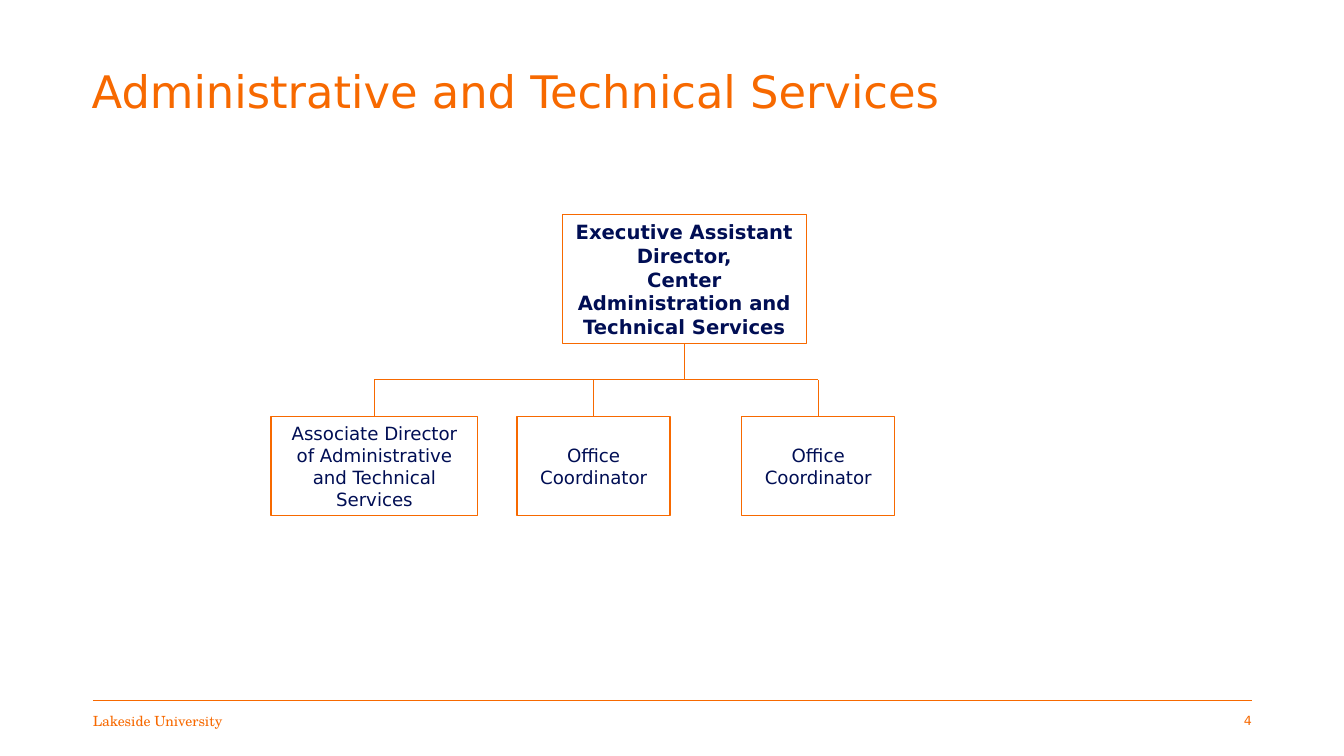
from pptx import Presentation
from pptx import util as u
from pptx.dml.color import RGBColor
from pptx.enum import shapes, text
from pptx.oxml.ns import qn
from lxml import etree

ORANGE, NAVY = "F76900", "000E54"
SANS, SERIF = "DejaVu Sans", "TeX Gyre Schola"

TITLE = "Administrative and Technical Services"
DIRECTOR = ["Executive Assistant Director,",
            "Center Administration and Technical Services"]
# left and width in cm, role
REPORTS = [
    (6.83, 5.21, "Associate Director of Administrative and Technical Services"),
    (13.03, 3.86, "Office Coordinator"),
    (18.69, 3.86, "Office Coordinator"),
]
# text, font, size, alignment
FOOTER = [
    ("Lakeside University", SERIF, 10, text.PP_ALIGN.LEFT),
    ("4", SANS, 9, text.PP_ALIGN.RIGHT),
]

DIRECTOR_BOX = (14.17, 5.41, 6.15, 3.25)
REPORT_TOP, REPORT_HEIGHT = 10.5, 2.49
BUS_Y = 9.57
MARGIN_LEFT, MARGIN_RIGHT = 2.34, 31.55
FOOTER_Y, FOOTER_WIDTH, FOOTER_HEIGHT = 17.65, 5.33, 1.02


def rgb(value):
    return RGBColor.from_string(value)


def write(frame, lines, size, color, align, font=SANS, bold=False):
    frame.word_wrap = True
    frame.vertical_anchor = text.MSO_ANCHOR.MIDDLE
    for index, line in enumerate(lines):
        paragraph = frame.paragraphs[0] if index == 0 else frame.add_paragraph()
        paragraph.alignment = align
        run = paragraph.add_run()
        run.text = line
        run.font.name = font
        run.font.size = u.Pt(size)
        run.font.bold = bold
        run.font.color.rgb = rgb(color)


def add_line(slide, x1, y1, x2, y2, width=1):
    line = slide.shapes.add_connector(
        shapes.MSO_CONNECTOR.STRAIGHT, *map(u.Cm, (x1, y1, x2, y2)))
    line.line.color.rgb = rgb(ORANGE)
    line.line.width = u.Pt(width)
    etree.SubElement(line._element.spPr, qn("a:effectLst"))
    return line


def add_role(slide, box, lines, size, bold=False):
    role = slide.shapes.add_shape(shapes.MSO_SHAPE.RECTANGLE, *map(u.Cm, box))
    role.shadow.inherit = False
    role.fill.background()
    role.line.color.rgb = rgb(ORANGE)
    role.line.width = u.Pt(1)
    write(role.text_frame, lines, size, NAVY, text.PP_ALIGN.CENTER, bold=bold)
    return role


def main():
    prs = Presentation()
    prs.slide_width, prs.slide_height = u.Cm(33.87), u.Cm(19.05)
    slide = prs.slides.add_slide(prs.slide_layouts[5])

    title = slide.shapes.title
    title.left, title.top = u.Cm(2.31), u.Cm(0.53)
    title.width, title.height = u.Cm(29.21), u.Cm(3.68)
    title.text_frame.margin_left = title.text_frame.margin_right = 0
    write(title.text_frame, [TITLE], 32, ORANGE, text.PP_ALIGN.LEFT)
    title.text_frame.paragraphs[0].line_spacing = 0.9

    left, top, width, height = DIRECTOR_BOX
    director = add_role(slide, DIRECTOR_BOX, DIRECTOR, 14, bold=True)
    trunk_x = left + width / 2
    trunk = add_line(slide, trunk_x, top + height, trunk_x, BUS_Y)
    trunk.begin_connect(director, 2)

    centres = [x + w / 2 for x, w, _ in REPORTS]
    add_line(slide, centres[0], BUS_Y, centres[-1], BUS_Y)
    for (x, w, label), centre in zip(REPORTS, centres):
        report = add_role(slide, (x, REPORT_TOP, w, REPORT_HEIGHT), [label], 13)
        drop = add_line(slide, centre, BUS_Y, centre, REPORT_TOP)
        drop.end_connect(report, 0)

    add_line(slide, MARGIN_LEFT, FOOTER_Y, MARGIN_RIGHT, FOOTER_Y, 0.5)
    footer_lefts = (MARGIN_LEFT, MARGIN_RIGHT - FOOTER_WIDTH)
    for x, (label, font, size, align) in zip(footer_lefts, FOOTER):
        box = slide.shapes.add_textbox(
            *map(u.Cm, (x, FOOTER_Y, FOOTER_WIDTH, FOOTER_HEIGHT)))
        box.text_frame.margin_left = box.text_frame.margin_right = 0
        write(box.text_frame, [label], size, ORANGE, align, font)

    prs.save("out.pptx")


if __name__ == "__main__":
    main()
